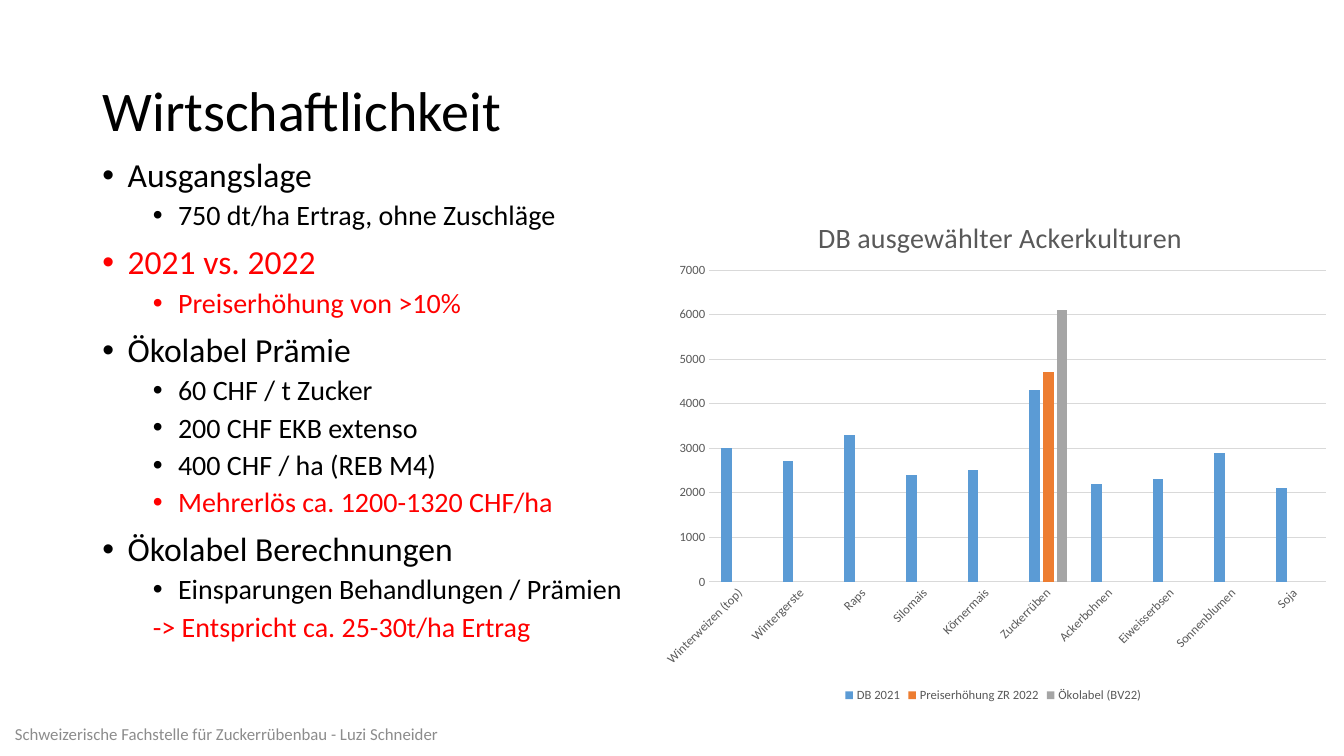
from dataclasses import dataclass

from lxml.etree import SubElement
from pptx import Presentation
from pptx.chart.data import CategoryChartData
from pptx.dml.color import RGBColor
from pptx.enum.chart import XL_CHART_TYPE, XL_LEGEND_POSITION, XL_TICK_MARK
from pptx.enum.text import MSO_ANCHOR, MSO_AUTO_SIZE, PP_ALIGN
from pptx.oxml.ns import qn
from pptx.util import Pt

PX = 9525
BULLET_STEP = 24


@dataclass(frozen=True)
class Theme:
    font: str = "Calibri"
    text: str = "000000"
    accent: str = "FF0000"
    footer: str = "8C8C8C"
    chart_text: str = "595959"
    grid: str = "D9D9D9"
    series: tuple = ("5B9BD5", "ED7D31", "A5A5A5")
    title_size: int = 40
    level_sizes: tuple = (24, 20)
    level_gaps: tuple = (10, 5)
    footer_size: int = 12
    chart_title_size: int = 20
    chart_size: int = 9
    line_spacing: float = 0.9


BULLETS = [
    (0, "Ausgangslage", False),
    (1, "750 dt/ha Ertrag, ohne Zuschläge", False),
    (0, "2021 vs. 2022", True),
    (1, "Preiserhöhung von >10%", True),
    (0, "Ökolabel Prämie", False),
    (1, "60 CHF / t Zucker", False),
    (1, "200 CHF EKB extenso", False),
    (1, "400 CHF / ha (REB M4)", False),
    (1, "Mehrerlös ca. 1200-1320 CHF/ha", True),
    (0, "Ökolabel Berechnungen", False),
    (1, "Einsparungen Behandlungen / Prämien", False),
    (1, "-> Entspricht ca. 25-30t/ha Ertrag", True),
]

MARGINS = {
    "Winterweizen (top)": (3000, None, None),
    "Wintergerste": (2700, None, None),
    "Raps": (3300, None, None),
    "Silomais": (2400, None, None),
    "Körnermais": (2500, None, None),
    "Zuckerrüben": (4300, 4700, 6100),
    "Ackerbohnen": (2200, None, None),
    "Eiweisserbsen": (2300, None, None),
    "Sonnenblumen": (2900, None, None),
    "Soja": (2100, None, None),
}
SERIES = ("DB 2021", "Preiserhöhung ZR 2022", "Ökolabel (BV22)")


class SlideBuilder:
    """Draws themed elements on one slide."""

    def __init__(self, prs, theme):
        self.theme = theme
        self.slide = prs.slides.add_slide(prs.slide_layouts[1])

    def style(self, font, size, color):
        font.name = self.theme.font
        font.size = Pt(size)
        font.bold = False
        font.color.rgb = RGBColor.from_string(color)

    def place(self, sp, box, anchor):
        sp.left, sp.top, sp.width, sp.height = (v * PX for v in box)
        tf = sp.text_frame
        tf.word_wrap = True
        tf.auto_size = MSO_AUTO_SIZE.NONE
        tf.vertical_anchor = anchor
        return tf

    def line(self, p, text, size, color, align):
        p.text = text
        p.alignment = align
        self.style(p.runs[0].font, size, color)

    def title(self, text, box):
        tf = self.place(self.slide.shapes.title, box, MSO_ANCHOR.MIDDLE)
        p = tf.paragraphs[0]
        self.line(p, text, self.theme.title_size, self.theme.text, PP_ALIGN.LEFT)
        p.line_spacing = self.theme.line_spacing

    def bullets(self, items, box):
        t = self.theme
        tf = self.place(self.slide.placeholders[1], box, MSO_ANCHOR.TOP)
        for i, (level, text, marked) in enumerate(items):
            p = tf.add_paragraph() if i else tf.paragraphs[0]
            p.level = level
            p.line_spacing = t.line_spacing
            p.space_before = Pt(t.level_gaps[level] if i else 0)
            self.bullet(p, level, not text.startswith("->"))
            color = t.accent if marked else t.text
            self.line(p, text, t.level_sizes[level], color, PP_ALIGN.LEFT)

    def bullet(self, p, level, shown):
        pPr = p._p.get_or_add_pPr()
        step = BULLET_STEP * PX
        pPr.set("marL", str(step * (2 * level + shown)))
        pPr.set("indent", str(-step * shown))
        if shown:
            SubElement(pPr, qn("a:buFont")).set("typeface", "Arial")
            SubElement(pPr, qn("a:buChar")).set("char", "•")
        else:
            SubElement(pPr, qn("a:buNone"))

    def footer(self, text, box):
        sp = self.slide.shapes.add_textbox(0, 0, 0, 0)
        tf = self.place(sp, box, MSO_ANCHOR.MIDDLE)
        self.line(tf.paragraphs[0], text, self.theme.footer_size,
                  self.theme.footer, PP_ALIGN.CENTER)

    def layout(self, parent, index, **parts):
        old = parent.find(qn("c:layout"))
        if old is not None:
            parent.remove(old)
        layout = parent.makeelement(qn("c:layout"))
        parent.insert(index, layout)
        manual = SubElement(layout, qn("c:manualLayout"))
        if "w" in parts:
            SubElement(manual, qn("c:layoutTarget")).set("val", "inner")
        for side in ("xMode", "yMode"):
            SubElement(manual, qn(f"c:{side}")).set("val", "edge")
        for name, share in parts.items():
            SubElement(manual, qn(f"c:{name}")).set("val", str(share))

    def axis(self, axis):
        axis.major_tick_mark = axis.minor_tick_mark = XL_TICK_MARK.NONE
        self.style(axis.tick_labels.font, self.theme.chart_size, self.theme.chart_text)

    def rule(self, line):
        line.color.rgb = RGBColor.from_string(self.theme.grid)
        line.width = Pt(0.75)

    def column_chart(self, title, margins, names, box):
        t = self.theme
        data = CategoryChartData()
        data.categories = list(margins)
        for name, values in zip(names, zip(*margins.values())):
            data.add_series(name, values)
        chart = self.slide.shapes.add_chart(
            XL_CHART_TYPE.COLUMN_CLUSTERED, *(v * PX for v in box), data).chart
        self.style(chart.font, 10, t.text)

        chart.has_title = True
        p = chart.chart_title.text_frame.paragraphs[0]
        self.line(p, title, t.chart_title_size, t.chart_text, PP_ALIGN.CENTER)

        chart.has_legend = True
        chart.legend.position = XL_LEGEND_POSITION.BOTTOM
        chart.legend.include_in_layout = False
        self.style(chart.legend.font, t.chart_size, t.chart_text)

        plot = chart.plots[0]
        plot.gap_width = 219
        plot.overlap = -27
        plot.vary_by_categories = False
        for series, color in zip(plot.series, t.series):
            series.format.fill.solid()
            series.format.fill.fore_color.rgb = RGBColor.from_string(color)

        crops, values = chart.category_axis, chart.value_axis
        self.axis(crops)
        self.axis(values)
        self.rule(crops.format.line)
        values.format.line.fill.background()
        values.has_major_gridlines = True
        self.rule(values.major_gridlines.format.line)
        values.minimum_scale, values.maximum_scale = 0, 7000
        values.major_unit = 1000

        root = chart.element
        root.xpath(".//c:catAx/c:txPr/a:bodyPr")[0].set("rot", "-2700000")
        self.layout(root.xpath(".//c:chart/c:title")[0], 1, x=0.24, y=0.05)
        self.layout(root.xpath(".//c:plotArea")[0], 0, x=0.09, y=0.16, w=0.89, h=0.6)


def main():
    prs = Presentation()
    prs.slide_width, prs.slide_height = 1280 * PX, 720 * PX
    s = SlideBuilder(prs, Theme())
    s.title("Wirtschaftlichkeit", (88, 38, 1040, 139))
    s.bullets(BULLETS, (88, 146, 1104, 534))
    s.footer("Schweizerische Fachstelle für Zuckerrübenbau - Luzi Schneider",
             (0, 680, 432, 38))
    s.column_chart("DB ausgewählter Ackerkulturen", MARGINS, SERIES,
                   (616, 178, 660, 495))
    prs.save("out.pptx")


if __name__ == "__main__":
    main()
